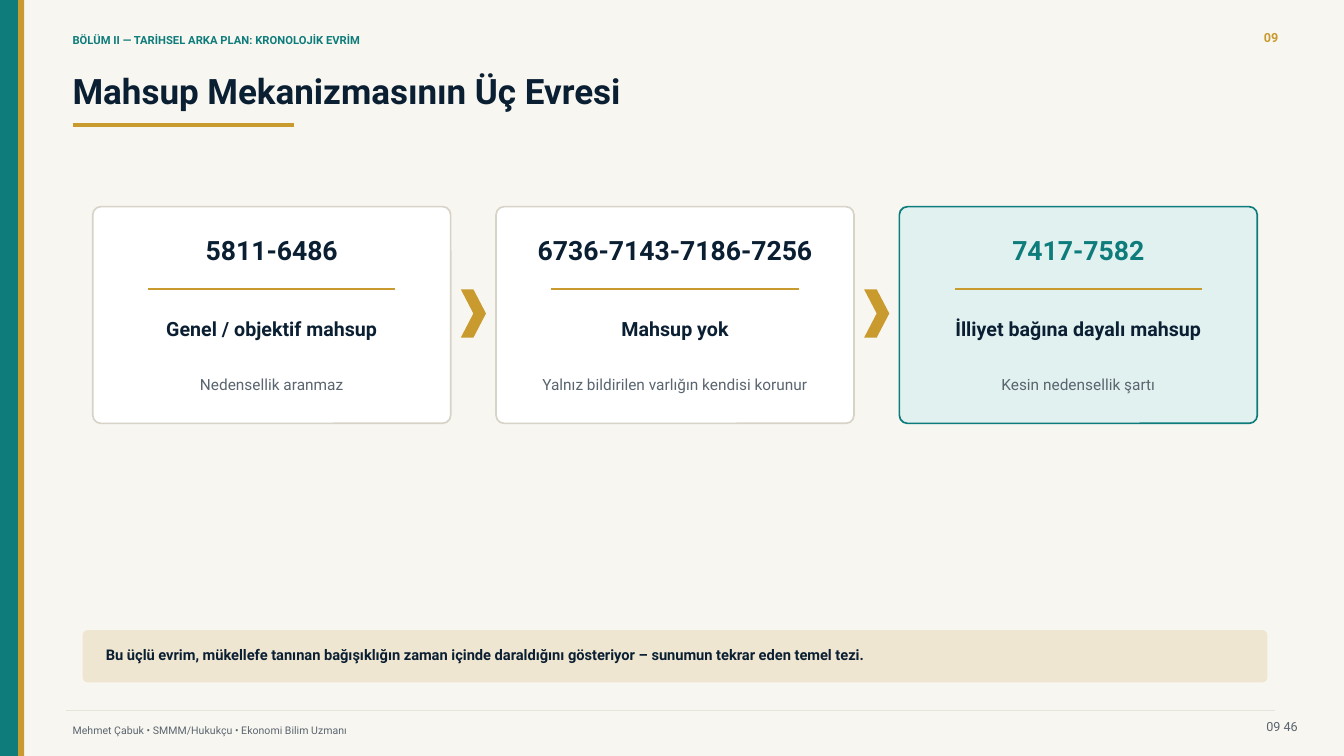
from dataclasses import dataclass
from lxml.etree import SubElement
from pptx import Presentation
from pptx.dml.color import RGBColor
from pptx.enum.shapes import MSO_CONNECTOR, MSO_SHAPE
from pptx.enum.text import MSO_ANCHOR, MSO_AUTO_SIZE, PP_ALIGN
from pptx.oxml.ns import qn
from pptx.util import Inches, Pt


@dataclass(frozen=True)
class Theme:
    font: str = "Roboto"
    paper: str = "F8F6F0"
    white: str = "FFFFFF"
    teal: str = "0E7C7B"
    mint: str = "E1F1F0"
    gold: str = "C99B2E"
    sand: str = "EFE6D1"
    ink: str = "0B1F33"
    gray: str = "5A6570"
    edge: str = "D8D3C7"
    rule: str = "E6E3DB"
    title: float = 25
    code: float = 19
    head: float = 14
    body: float = 11
    note: float = 10.5
    page: float = 9
    label: float = 8
    foot: float = 7.5


T = Theme()
WIDE, HIGH = 13.33, 7.5
LEFT = 0.72  # text margin

# Card grid: three columns, one row
CARD_X, CARD_Y, CARD_W, CARD_H, GAP = 0.92, 2.05, 3.55, 2.15, 0.45
ARROW_W, ARROW_H = 0.25, 0.48

STAGES = [
    ("5811-6486", "Genel / objektif mahsup", "Nedensellik aranmaz"),
    ("6736-7143-7186-7256", "Mahsup yok",
     "Yalnız bildirilen varlığın kendisi korunur"),
    ("7417-7582", "İlliyet bağına dayalı mahsup", "Kesin nedensellik şartı"),
]


def color(code):
    return RGBColor.from_string(code)


def inches(*box):
    return [Inches(n) for n in box]


def write(frame, text, size=T.body, tint=T.ink, bold=False,
          align=PP_ALIGN.LEFT):
    """Fill a text frame with one formatted paragraph and no insets."""
    frame.word_wrap = True
    frame.auto_size = MSO_AUTO_SIZE.NONE
    frame.vertical_anchor = MSO_ANCHOR.MIDDLE
    frame.margin_left = frame.margin_right = 0
    frame.margin_top = frame.margin_bottom = 0
    para = frame.paragraphs[0]
    para.alignment = align
    run = para.add_run()
    run.text = text
    run.font.name = T.font
    run.font.size = Pt(size)
    run.font.bold = bold
    run.font.color.rgb = color(tint)


def label(slide, box, text, **style):
    write(slide.shapes.add_textbox(*inches(*box)).text_frame, text, **style)


def block(slide, kind, box, fill, edge=None, radius=None):
    shape = slide.shapes.add_shape(kind, *inches(*box))
    shape.shadow.inherit = False
    shape.fill.solid()
    shape.fill.fore_color.rgb = color(fill)
    if edge:
        shape.line.color.rgb = color(edge)
        shape.line.width = Pt(1.2)
    else:
        shape.line.fill.background()
    if radius:
        shape.adjustments[0] = radius / min(box[2:])


def rule(slide, x, y, width, tint, weight):
    line = slide.shapes.add_connector(
        MSO_CONNECTOR.STRAIGHT, *inches(x, y, x + width, y))
    line.line.color.rgb = color(tint)
    line.line.width = Pt(weight)
    SubElement(line._element.spPr, qn("a:effectLst"))


def card(slide, x, stage, active):
    code, head, body = stage
    fill, edge, tint = ((T.mint, T.teal, T.teal) if active
                        else (T.white, T.edge, T.ink))
    mid = PP_ALIGN.CENTER
    block(slide, MSO_SHAPE.ROUNDED_RECTANGLE, (x, CARD_Y, CARD_W, CARD_H),
          fill, edge, radius=0.08)
    label(slide, (x + 0.2, CARD_Y + 0.25, CARD_W - 0.4, 0.35), code,
          size=T.code, tint=tint, bold=True, align=mid)
    rule(slide, x + 0.55, CARD_Y + 0.82, CARD_W - 1.1, T.gold, 1.4)
    label(slide, (x + 0.25, CARD_Y + 1, CARD_W - 0.5, 0.42), head,
          size=T.head, bold=True, align=mid)
    label(slide, (x + 0.25, CARD_Y + 1.55, CARD_W - 0.5, 0.42), body,
          tint=T.gray, align=mid)


def header(slide):
    block(slide, MSO_SHAPE.RECTANGLE, (0, 0, 0.18, HIGH), T.teal)
    block(slide, MSO_SHAPE.RECTANGLE, (0.18, 0, 0.06, HIGH), T.gold)
    label(slide, (LEFT, 0.29, 8.6, 0.22),
          "BÖLÜM II — TARİHSEL ARKA PLAN: KRONOLOJİK EVRİM",
          size=T.label, tint=T.teal, bold=True)
    label(slide, (11.98, 0.25, 0.7, 0.25), "09",
          size=T.page, tint=T.gold, bold=True, align=PP_ALIGN.RIGHT)
    title = slide.shapes.title
    title.left, title.top, title.width, title.height = inches(
        LEFT, 0.65, 11.85, 0.5)
    write(title.text_frame, "Mahsup Mekanizmasının Üç Evresi",
          size=T.title, bold=True)
    rule(slide, LEFT, 1.24, 2.2, T.gold, 2.4)


def stages(slide):
    for col, stage in enumerate(STAGES):
        x = CARD_X + col * (CARD_W + GAP)
        last = col == len(STAGES) - 1
        card(slide, x, stage, active=last)
        if not last:
            block(slide, MSO_SHAPE.CHEVRON,
                  (x + CARD_W + (GAP - ARROW_W) / 2, CARD_Y + 0.82,
                   ARROW_W, ARROW_H), T.gold)


def thesis(slide):
    block(slide, MSO_SHAPE.ROUNDED_RECTANGLE, (0.82, 6.25, 11.75, 0.52),
          T.sand, radius=0.05)
    label(slide, (1.05, 6.37, 11.25, 0.25),
          "Bu üçlü evrim, mükellefe tanınan bağışıklığın zaman içinde "
          "daraldığını gösteriyor – sunumun tekrar eden temel tezi.",
          size=T.note, bold=True)


def footer(slide):
    rule(slide, 0.65, 7.05, 12, T.rule, 0.7)
    label(slide, (LEFT, 7.15, 7.2, 0.18),
          "Mehmet Çabuk • SMMM/Hukukçu • Ekonomi Bilim Uzmanı",
          size=T.foot, tint=T.gray)
    label(slide, (12.25, 7.08, 0.45, 0.25), "09",
          size=T.page, tint=T.gray, align=PP_ALIGN.RIGHT)
    label(slide, (12.73, 7.08, 0.25, 0.25), "46", size=T.page, tint=T.gray)


def main():
    deck = Presentation()
    deck.slide_width, deck.slide_height = inches(WIDE, HIGH)
    slide = deck.slides.add_slide(deck.slide_layouts.get_by_name("Title Only"))
    slide.background.fill.solid()
    slide.background.fill.fore_color.rgb = color(T.paper)
    header(slide)
    stages(slide)
    thesis(slide)
    footer(slide)
    deck.save("out.pptx")


if __name__ == "__main__":
    main()
